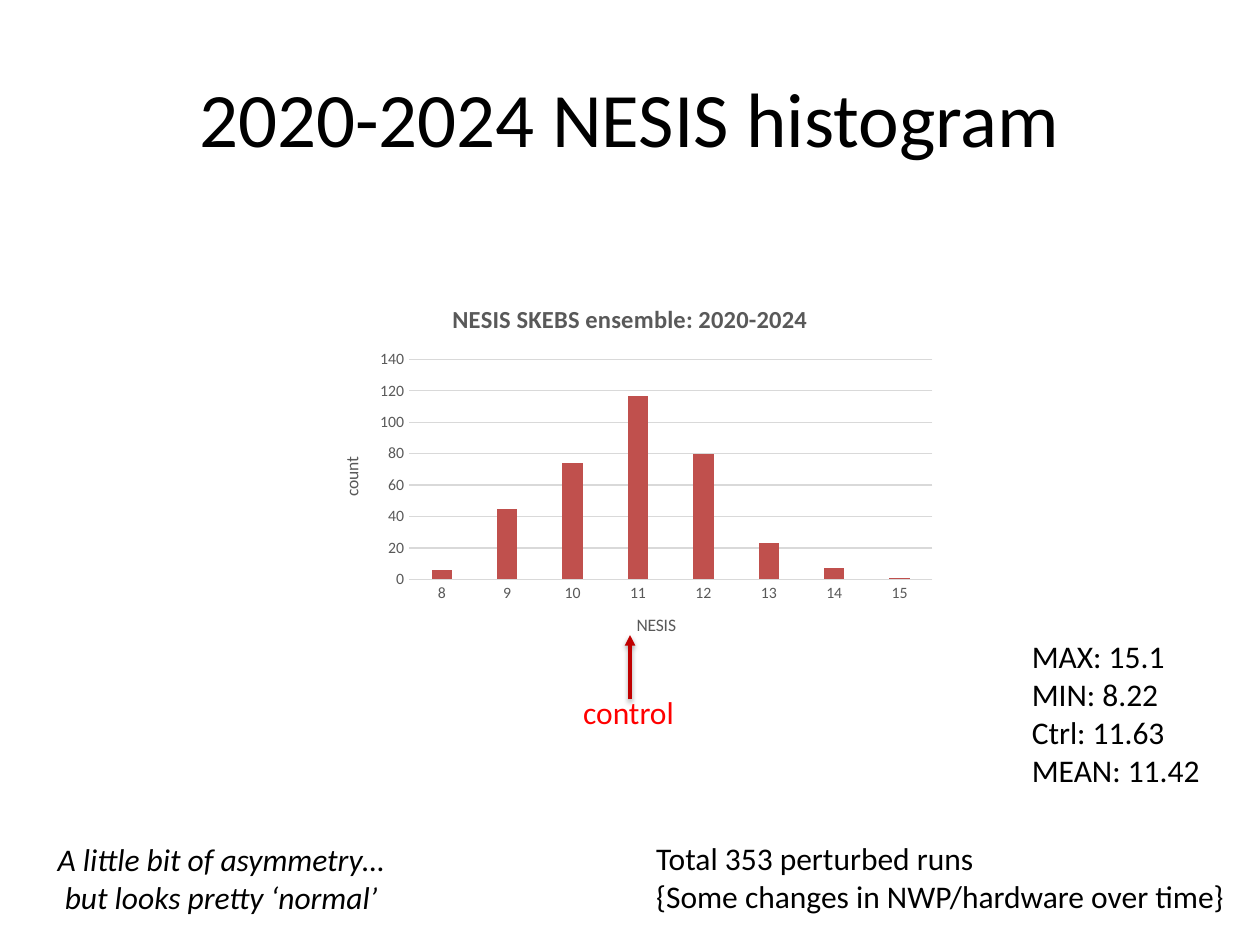
"""Build the NESIS histogram slide with its notes and control arrow."""
from dataclasses import dataclass

from lxml.etree import SubElement
from pptx import Presentation
from pptx.chart.data import CategoryChartData
from pptx.dml.color import RGBColor
from pptx.enum.chart import XL_CHART_TYPE as ChartType, XL_TICK_MARK as TickMark
from pptx.enum.shapes import MSO_CONNECTOR as Connector
from pptx.enum.text import MSO_ANCHOR as Anchor, PP_ALIGN as Align
from pptx.oxml.ns import qn
from pptx.slide import Slide
from pptx.util import Inches, Pt

FONT = "Calibri"
GREY = "595959"
GRID = "D9D9D9"


@dataclass
class Note:
    left: float
    top: float
    width: float
    height: float
    lines: tuple[str, ...]
    size: float = 18
    color: str = "000000"
    italic: bool = False
    wrap: bool = False
    align: Align = Align.LEFT
    anchor: Anchor = Anchor.TOP


NOTES = (
    Note(0.5, 0.3, 9, 1.25, ("2020-2024 NESIS histogram",), size=44,
         wrap=True, align=Align.CENTER, anchor=Anchor.MIDDLE),
    Note(4.53, 5.45, 0.93, 0.4, ("control",), color="FF0000"),
    Note(5.11, 6.61, 4.73, 0.71,
         ("Total 353 perturbed runs", "{Some changes in NWP/hardware over time}")),
    Note(0.36, 6.62, 2.83, 0.71,
         ("A little bit of asymmetry…", " but looks pretty ‘normal’"), italic=True),
    Note(8.09, 5.01, 1.55, 1.31,
         ("MAX: 15.1", "MIN: 8.22", "Ctrl: 11.63", "MEAN: 11.42")),
)
COUNTS = {"8": 6, "9": 45, "10": 74, "11": 117, "12": 80, "13": 23, "14": 7, "15": 1}


def rgb(value: str) -> RGBColor:
    return RGBColor.from_string(value)


def format_font(font, color: str, **values) -> None:
    for name, value in {"name": FONT, **values}.items():
        setattr(font, name, value)
    font.color.rgb = rgb(color)


def add_note(slide: Slide, note: Note) -> None:
    box = slide.shapes.add_textbox(
        *map(Inches, (note.left, note.top, note.width, note.height)))
    frame = box.text_frame
    frame.word_wrap = note.wrap
    frame.vertical_anchor = note.anchor
    frame.text = "\n".join(note.lines)
    for paragraph in frame.paragraphs:
        paragraph.alignment = note.align
        format_font(paragraph.runs[0].font, note.color,
                    size=Pt(note.size), italic=note.italic)


def add_arrow(slide: Slide) -> None:
    arrow = slide.shapes.add_connector(
        Connector.STRAIGHT, *map(Inches, (5, 5.55, 5, 5.04)))
    arrow.line.color.rgb = rgb("C00000")
    arrow.line.width = Pt(2)
    properties = arrow.line._get_or_add_ln()
    SubElement(properties, qn("a:tailEnd"), type="triangle")
    effects = SubElement(properties.getparent(), qn("a:effectLst"))
    shadow = SubElement(effects, qn("a:outerShdw"), blurRad=str(Pt(3.1)),
                        dist=str(Pt(1.6)), dir="5400000", rotWithShape="0")
    color = SubElement(shadow, qn("a:srgbClr"), val="000000")
    SubElement(color, qn("a:alpha"), val="38000")


def set_title(owner, text: str, size: float, bold: bool) -> None:
    frame = owner.text_frame
    frame.text = text
    format_font(frame.paragraphs[0].runs[0].font, GREY, size=Pt(size), bold=bold)


def format_axis(axis, title: str) -> None:
    values = {"major_tick_mark": TickMark.NONE, "minor_tick_mark": TickMark.NONE}
    for name, value in values.items():
        setattr(axis, name, value)
    format_font(axis.tick_labels.font, GREY, size=Pt(9))
    set_title(axis.axis_title, title, 10, False)


def style_line(line, color: str) -> None:
    line.color.rgb = rgb(color)
    line.width = Pt(0.75)


def add_histogram(slide: Slide) -> None:
    data = CategoryChartData()
    data.categories = list(COUNTS)
    data.add_series("Series 1", list(COUNTS.values()))
    chart = slide.shapes.add_chart(
        ChartType.COLUMN_CLUSTERED, *map(Inches, (2.5, 2.25, 5, 3)), data).chart
    format_font(chart.font, "000000", size=Pt(10))
    chart.has_legend = False
    set_title(chart.chart_title, "NESIS SKEBS ensemble: 2020-2024", 14, True)
    chart.chart_title.include_in_layout = False

    format_axis(chart.category_axis, "NESIS")
    format_axis(chart.value_axis, "count")
    style_line(chart.category_axis.format.line, GRID)
    style_line(chart.value_axis.major_gridlines.format.line, GRID)
    chart.value_axis.format.line.fill.background()

    plot = chart.plots[0]
    for name, value in {"gap_width": 219, "overlap": -27, "vary_by_categories": False}.items():
        setattr(plot, name, value)
    fill = plot.series[0].format.fill
    fill.solid()
    fill.fore_color.rgb = rgb("C0504D")


def main() -> None:
    presentation = Presentation()
    presentation.slide_width = Inches(10)
    presentation.slide_height = Inches(7.5)
    slide = presentation.slides.add_slide(presentation.slide_layouts[6])
    add_arrow(slide)
    for note in NOTES:
        add_note(slide, note)
    add_histogram(slide)
    presentation.save("out.pptx")


if __name__ == "__main__":
    main()
